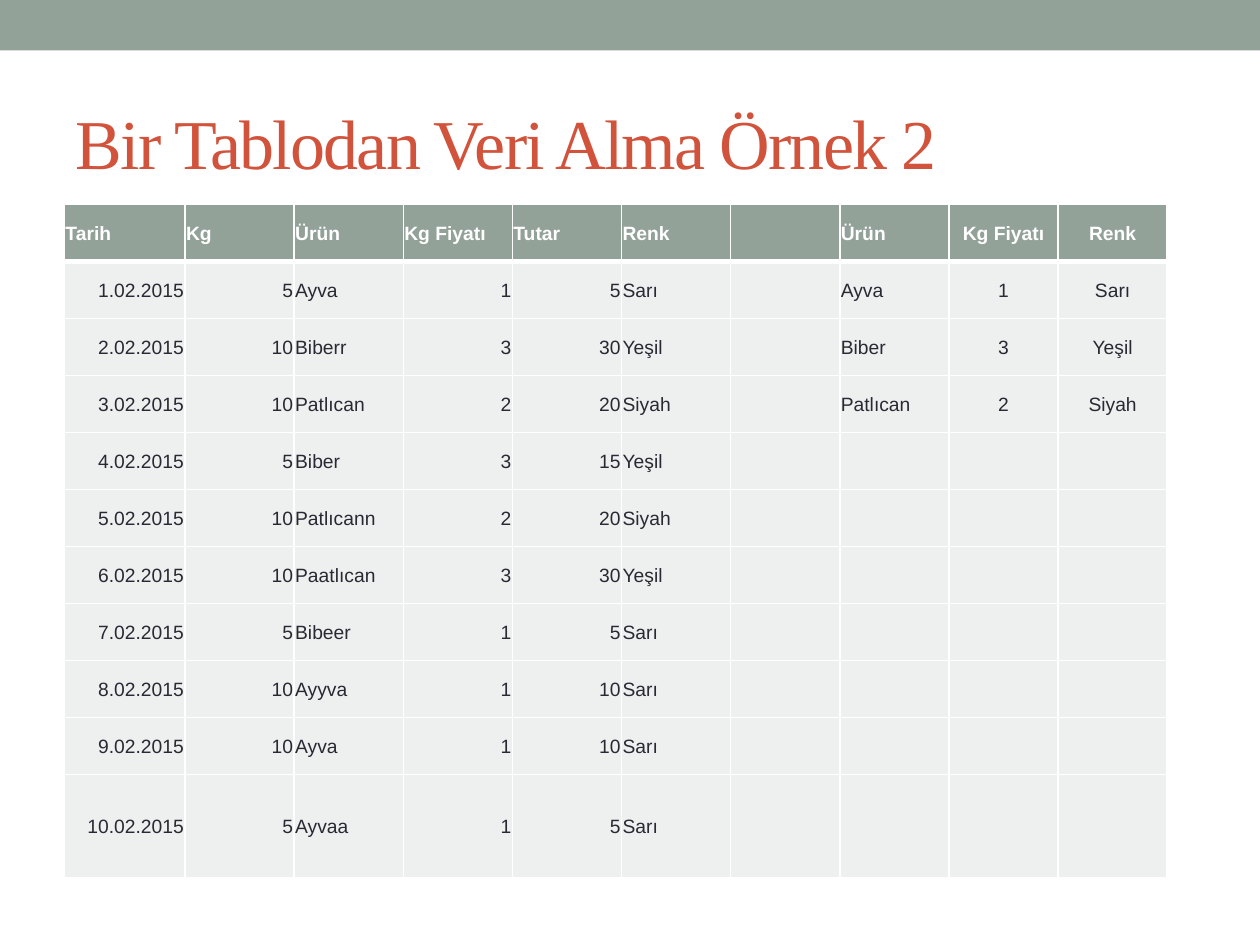
from lxml import etree
from pptx import Presentation
from pptx.dml.color import RGBColor
from pptx.enum.shapes import MSO_SHAPE
from pptx.enum.text import MSO_ANCHOR, MSO_AUTO_SIZE, PP_ALIGN
from pptx.oxml.ns import qn
from pptx.util import Cm, Pt

RECT = MSO_SHAPE.RECTANGLE
MIDDLE = MSO_ANCHOR.MIDDLE
NO_AUTOFIT = MSO_AUTO_SIZE.NONE
LEFT, CENTER, RIGHT = PP_ALIGN.LEFT, PP_ALIGN.CENTER, PP_ALIGN.RIGHT
TITLE_ONLY = 5

HEADER = ["Tarih", "Kg", "Ürün", "Kg Fiyatı", "Tutar", "Renk",
          "", "Ürün", "Kg Fiyatı", "Renk"]
SALES = [
    ("1.02.2015", 5, "Ayva", 1, 5, "Sarı"),
    ("2.02.2015", 10, "Biberr", 3, 30, "Yeşil"),
    ("3.02.2015", 10, "Patlıcan", 2, 20, "Siyah"),
    ("4.02.2015", 5, "Biber", 3, 15, "Yeşil"),
    ("5.02.2015", 10, "Patlıcann", 2, 20, "Siyah"),
    ("6.02.2015", 10, "Paatlıcan", 3, 30, "Yeşil"),
    ("7.02.2015", 5, "Bibeer", 1, 5, "Sarı"),
    ("8.02.2015", 10, "Ayyva", 1, 10, "Sarı"),
    ("9.02.2015", 10, "Ayva", 1, 10, "Sarı"),
    ("10.02.2015", 5, "Ayvaa", 1, 5, "Sarı"),
]
PRODUCTS = [("Ayva", 1, "Sarı"), ("Biber", 3, "Yeşil"), ("Patlıcan", 2, "Siyah")]
HEADER_ALIGN = [LEFT] * 8 + [CENTER] * 2
BODY_ALIGN = [RIGHT, RIGHT, LEFT, RIGHT, RIGHT, LEFT, LEFT, LEFT, CENTER, CENTER]


def rgb(hex_color):
    return RGBColor.from_string(hex_color)


class SlideBuilder:
    accent, title_color, text_color = "93A299", "D2533C", "292934"
    white, body_fill = "FFFFFF", "EEF0EF"
    title_font, table_font = "Times New Roman", "Arial"

    def __init__(self, prs):
        self.s = prs.slides.add_slide(prs.slide_layouts[TITLE_ONLY])

    def band(self, x, y, w, h):
        sp = self.s.shapes.add_shape(RECT, Cm(x), Cm(y), Cm(w), Cm(h))
        sp.shadow.inherit = False
        sp.fill.solid()
        sp.fill.fore_color.rgb = rgb(self.accent)
        sp.line.fill.background()

    def title(self, text, x, y, w, h):
        sp = self.s.shapes.title
        sp.left, sp.top, sp.width, sp.height = Cm(x), Cm(y), Cm(w), Cm(h)
        tf = sp.text_frame
        tf.text = text
        tf.auto_size = NO_AUTOFIT
        tf.vertical_anchor = MIDDLE
        p = tf.paragraphs[0]
        p.alignment = LEFT
        r = p.runs[0]
        self.format_font(r.font, self.title_font, 40, self.title_color)
        r._r.get_or_add_rPr().set("spc", "-100")

    def format_font(self, font, name, size, color, bold=False):
        font.name, font.size, font.bold = name, Pt(size), bold
        font.color.rgb = rgb(color)

    def borders(self, cell, top, bottom):
        """Draw white cell borders; top and bottom widths are in points."""
        tcPr = cell._tc.get_or_add_tcPr()
        for side, width in (("L", 1), ("R", 1), ("T", top), ("B", bottom)):
            ln = etree.SubElement(tcPr, qn(f"a:ln{side}"), w=str(Pt(width)))
            fill = etree.SubElement(ln, qn("a:solidFill"))
            etree.SubElement(fill, qn("a:srgbClr"), val=self.white)

    def cell(self, cell, value, align, row):
        is_header = row == 0
        self.borders(cell, 3 if row == 1 else 1, 3 if is_header else 1)
        cell.fill.solid()
        cell.fill.fore_color.rgb = rgb(self.accent if is_header else self.body_fill)
        cell.margin_left = cell.margin_right = cell.margin_top = Cm(0.02)
        cell.margin_bottom = 0
        cell.vertical_anchor = MIDDLE
        p = cell.text_frame.paragraphs[0]
        p.text = str(value)
        p.alignment = align
        color = self.white if is_header else self.text_color
        for r in p.runs:
            self.format_font(r.font, self.table_font, 11, color, is_header)

    def table(self, rows, x, y, widths, heights):
        frame = self.s.shapes.add_table(len(rows), len(widths), Cm(x), Cm(y),
                                        Cm(sum(widths)), Cm(sum(heights)))
        tbl = frame.table
        for column, width in zip(tbl.columns, widths):
            column.width = Cm(width)
        for row, height in zip(tbl.rows, heights):
            row.height = Cm(height)
        for i, values in enumerate(rows):
            aligns = BODY_ALIGN if i else HEADER_ALIGN
            for j, (value, align) in enumerate(zip(values, aligns)):
                self.cell(tbl.cell(i, j), value, align, i)


def table_rows():
    """Join sales and product list side by side, with a blank column between."""
    blanks = [("", "", "")] * (len(SALES) - len(PRODUCTS))
    return [HEADER] + [[*sale, "", *product]
                       for sale, product in zip(SALES, PRODUCTS + blanks)]


def main():
    prs = Presentation()
    prs.slide_width, prs.slide_height = Cm(25.4), Cm(19.05)
    slide = SlideBuilder(prs)
    slide.band(0, 0, 25.4, 1.02)
    slide.title("Bir Tablodan Veri Alma Örnek 2", 1.27, 1.48, 22.86, 2.74)
    slide.table(table_rows(), 1.3, 4.12, [2.43] + [2.2] * 9, [1.15] * 10 + [2.08])
    prs.save("out.pptx")


if __name__ == "__main__":
    main()
